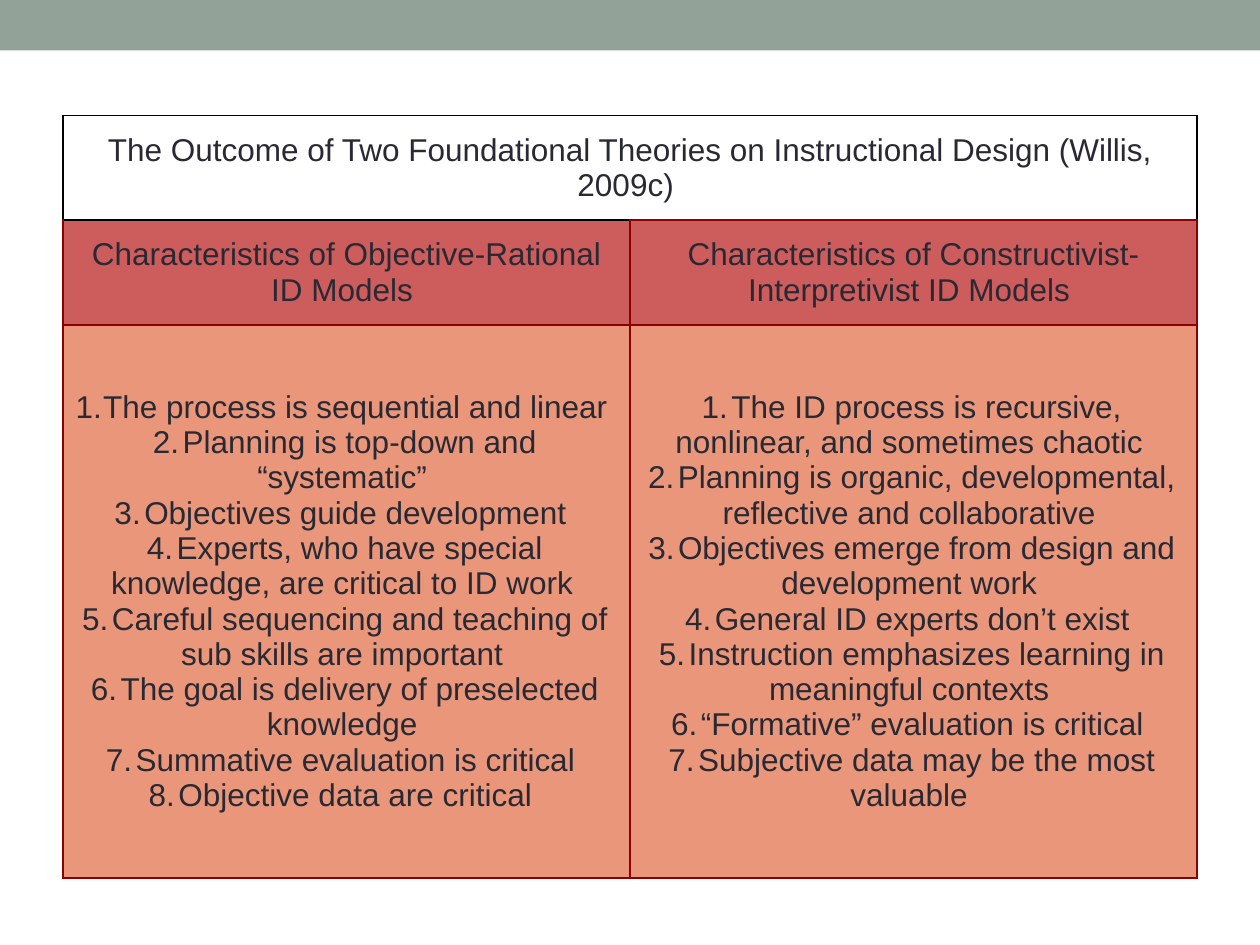
import lxml.etree
import pptx
import pptx.dml.color
import pptx.enum.shapes
import pptx.enum.text
import pptx.oxml.ns
import pptx.util
from pptx.util import Cm

RGBColor = pptx.dml.color.RGBColor
SAGE = RGBColor(0x93, 0xA2, 0x99)
INK = RGBColor(0x29, 0x29, 0x34)
BLACK = RGBColor(0, 0, 0)
DARK_RED = RGBColor(0x8B, 0, 0)
INDIAN_RED = RGBColor(0xCD, 0x5C, 0x5C)
SALMON = RGBColor(0xE9, 0x96, 0x7A)

TITLE = "The Outcome of Two Foundational Theories on Instructional Design (Willis, 2009c) "
MODELS = {
    "Characteristics of Objective-Rational ID Models ": [
        "The process is sequential and linear ",
        "Planning is top-down and “systematic” ",
        "Objectives guide development ",
        "Experts, who have special knowledge, are critical to ID work ",
        "Careful sequencing and teaching of sub skills are important ",
        "The goal is delivery of preselected knowledge ",
        "Summative evaluation is critical ",
        "Objective data are critical ",
    ],
    "Characteristics of Constructivist-Interpretivist ID Models ": [
        "The ID process is recursive, nonlinear, and sometimes chaotic ",
        "Planning is organic, developmental, reflective and collaborative ",
        "Objectives emerge from design and development work ",
        "General ID experts don’t exist ",
        "Instruction emphasizes learning in meaningful contexts ",
        "“Formative” evaluation is critical ",
        "Subjective data may be the most valuable ",
    ],
}


def add_child(parent, tag, **attributes):
    return lxml.etree.SubElement(parent, pptx.oxml.ns.qn(tag), **attributes)


def set_borders(cell, color, points, top_color=None):
    """Draw all four sides; call before filling, as the schema puts lines first."""
    properties = cell._tc.get_or_add_tcPr()
    for side in "LRTB":
        side_color = top_color if side == "T" and top_color is not None else color
        line = add_child(properties, f"a:ln{side}", w=str(pptx.util.Pt(points)))
        add_child(add_child(line, "a:solidFill"), "a:srgbClr", val=str(side_color))


def fill_cell(cell, color):
    if color is None:
        cell.fill.background()
    else:
        cell.fill.solid()
        cell.fill.fore_color.rgb = color


def write_cell(cell, lines, numbered=False):
    cell.vertical_anchor = pptx.enum.text.MSO_ANCHOR.MIDDLE
    frame = cell.text_frame
    for index, line in enumerate(lines):
        para = frame.add_paragraph() if index else frame.paragraphs[0]
        para.alignment = pptx.enum.text.PP_ALIGN.CENTER
        if numbered:
            add_child(para._p.get_or_add_pPr(), "a:buAutoNum", type="arabicPeriod")
        span = para.add_run()
        span.text = line
        span.font.name = "Arial"
        span.font.size = pptx.util.Pt(18)
        span.font.color.rgb = INK


def add_top_band(page, width):
    band = page.shapes.add_shape(
        pptx.enum.shapes.MSO_SHAPE.RECTANGLE, 0, 0, width, Cm(1.02))
    band.shadow.inherit = False
    band.fill.solid()
    band.fill.fore_color.rgb = SAGE
    band.line.fill.background()


def add_models_table(page):
    table = page.shapes.add_table(
        3, len(MODELS), Cm(1.27), Cm(2.33), Cm(22.86), Cm(15.37)).table
    table.first_row = False
    table.horz_banding = False
    for row, height in zip(table.rows, (2.11, 2.11, 11.15)):
        row.height = Cm(height)

    title_cell = table.cell(0, 0)
    title_cell.merge(table.cell(0, len(MODELS) - 1))
    write_cell(title_cell, [TITLE])
    for cell in table.rows[0].cells:
        set_borders(cell, BLACK, 1)
        fill_cell(cell, None)

    for column, (heading, traits) in enumerate(MODELS.items()):
        heading_cell, traits_cell = table.cell(1, column), table.cell(2, column)
        write_cell(heading_cell, [heading])
        write_cell(traits_cell, traits, numbered=True)
        set_borders(heading_cell, DARK_RED, 1.5, BLACK if column == 0 else None)
        set_borders(traits_cell, DARK_RED, 1.5)
        fill_cell(heading_cell, INDIAN_RED)
        fill_cell(traits_cell, SALMON)


def main():
    deck = pptx.Presentation()
    deck.slide_width, deck.slide_height = Cm(25.4), Cm(19.05)
    page = deck.slides.add_slide(deck.slide_layouts[6])
    add_top_band(page, deck.slide_width)
    add_models_table(page)
    deck.save("out.pptx")


if __name__ == "__main__":
    main()
